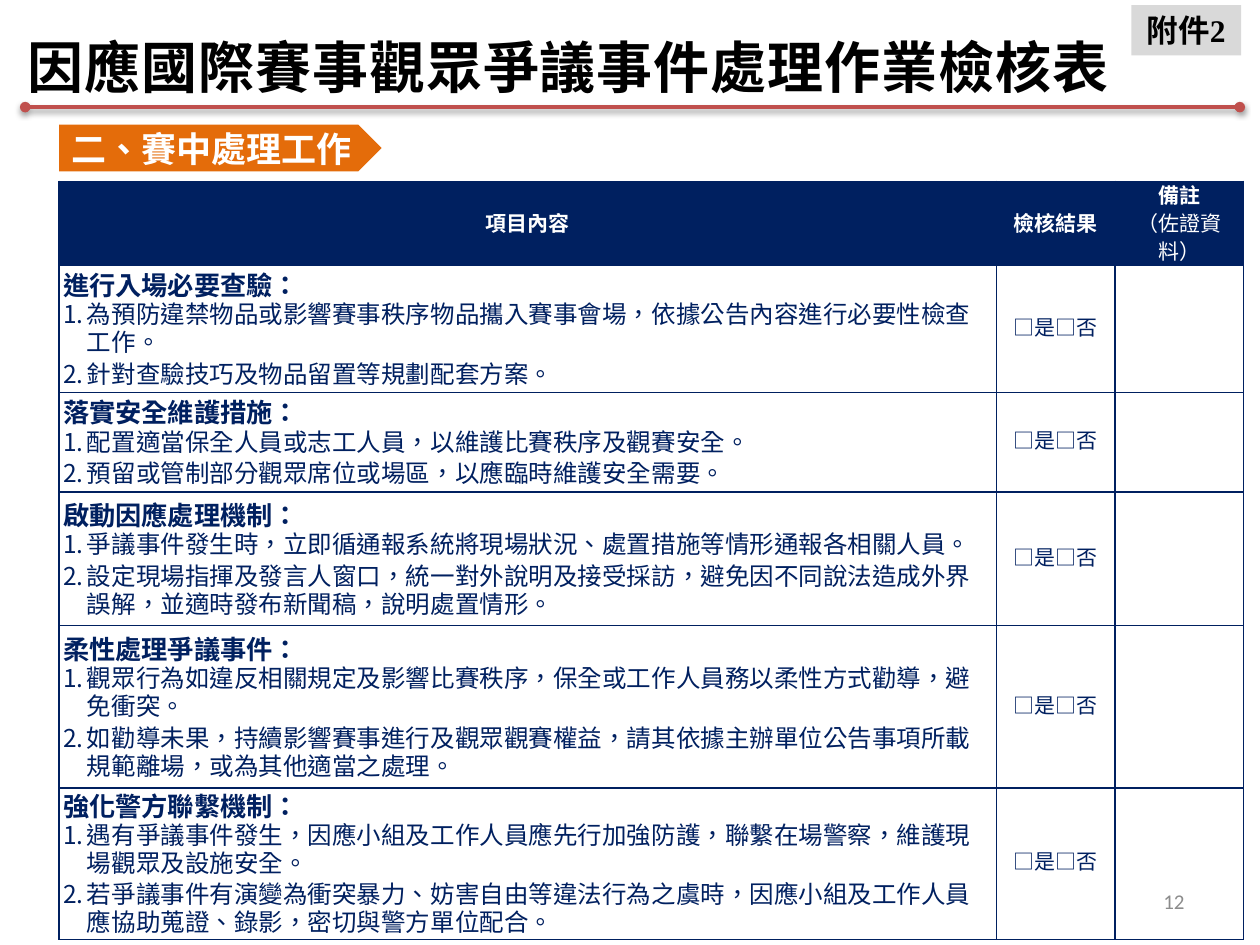
from lxml.etree import SubElement
from pptx import Presentation
from pptx.dml.color import RGBColor
from pptx.enum.lang import MSO_LANGUAGE_ID as Language
from pptx.enum.shapes import MSO_CONNECTOR as Connector, MSO_SHAPE as Shape
from pptx.enum.text import MSO_ANCHOR as Anchor, MSO_AUTO_SIZE as AutoSize, PP_ALIGN as Align
from pptx.oxml import parse_xml
from pptx.oxml.ns import nsdecls, qn
from pptx.util import Inches, Pt

COLORS = {"navy": "002060", "white": "FFFFFF", "orange": "E46C0A", "black": "000000",
          "red": "C0504D", "silver": "D9D9D9", "gray": "8C8C8C"}
SERIF, SANS, LATIN = "Times New Roman", "Noto Sans CJK SC", "Calibri"
COLUMNS = [7.44, 0.94, 1.02]
ROWS = [0.22, 1.01, 0.79, 1.06, 1.29, 1.2]
HEADINGS = [["項目內容"], ["檢核結果"], ["備註", "（佐證資料）"]]
ITEMS = [
    ("進行入場必要查驗：",
     "為預防違禁物品或影響賽事秩序物品攜入賽事會場，依據公告內容進行必要性檢查工作。",
     "針對查驗技巧及物品留置等規劃配套方案。"),
    ("落實安全維護措施：",
     "配置適當保全人員或志工人員，以維護比賽秩序及觀賽安全。",
     "預留或管制部分觀眾席位或場區，以應臨時維護安全需要。"),
    ("啟動因應處理機制：",
     "爭議事件發生時，立即循通報系統將現場狀況、處置措施等情形通報各相關人員。",
     "設定現場指揮及發言人窗口，統一對外說明及接受採訪，避免因不同說法造成外界誤解，並適時發布新聞稿，說明處置情形。"),
    ("柔性處理爭議事件：",
     "觀眾行為如違反相關規定及影響比賽秩序，保全或工作人員務以柔性方式勸導，避免衝突。",
     "如勸導未果，持續影響賽事進行及觀眾觀賽權益，請其依據主辦單位公告事項所載規範離場，或為其他適當之處理。"),
    ("強化警方聯繫機制：",
     "遇有爭議事件發生，因應小組及工作人員應先行加強防護，聯繫在場警察，維護現場觀眾及設施安全。",
     "若爭議事件有演變為衝突暴力、妨害自由等違法行為之虞時，因應小組及工作人員應協助蒐證、錄影，密切與警方單位配合。"),
]


def color(name):
    """Return a named colour."""
    return RGBColor.from_string(COLORS[name])


def add_span(para, text, size, ink, font=SERIF, bold=False):
    """Add one formatted run to a paragraph."""
    span = para.add_run()
    span.text = text
    span.font.size, span.font.bold, span.font.name = Pt(size), bold, font
    span.font.color.rgb = color(ink)
    span.font.language_id = Language.TRADITIONAL_CHINESE
    SubElement(span.font._element, qn("a:ea"), typeface=SANS)
    return span


def next_para(frame, index, spacing, align=Align.LEFT):
    """Return the paragraph at an index, added if needed, with exact line spacing."""
    para = frame.paragraphs[0] if index == 0 else frame.add_paragraph()
    para.alignment, para.line_spacing = align, Pt(spacing)
    return para


def number_para(para):
    """Give a paragraph an automatic number and a hanging indent."""
    props = para._p.get_or_add_pPr()
    props.set("marL", str(Inches(0.19)))
    props.set("indent", str(-Inches(0.19)))
    SubElement(props, qn("a:buFont"), typeface=SANS)
    SubElement(props, qn("a:buAutoNum"), type="arabicPeriod")
    para.space_after = Pt(2)


def style_cell(cell, margin, fill=None):
    """Set the margins, borders and fill of a cell."""
    cell.vertical_anchor = Anchor.MIDDLE
    cell.margin_left = cell.margin_right = Inches(margin)
    cell.margin_top = cell.margin_bottom = 0
    for side in ("lnL", "lnR", "lnT", "lnB"):
        cell._tc.get_or_add_tcPr().append(parse_xml(
            f'<a:{side} {nsdecls("a")} w="{Pt(1)}"><a:solidFill>'
            f'<a:srgbClr val="{COLORS["navy"]}"/></a:solidFill></a:{side}>'))
    if fill:
        cell.fill.solid()
        cell.fill.fore_color.rgb = color(fill)
    else:
        cell.fill.background()


def add_title(page, box):
    """Place the slide title."""
    title = page.shapes.title
    title.left, title.top, title.width, title.height = map(Inches, box)
    frame = title.text_frame
    frame.word_wrap, frame.auto_size = False, AutoSize.SHAPE_TO_FIT_TEXT
    frame.vertical_anchor = Anchor.TOP
    para = frame.paragraphs[0]
    para.alignment = Align.LEFT
    span = add_span(para, "因應國際賽事觀眾爭議事件處理作業檢核表", 32, "black", SANS, True)
    span.font._element.set("spc", "50")


def add_rule(page, left, right, top):
    """Draw the shadowed line with round ends under the title."""
    rule = page.shapes.add_connector(
        Connector.STRAIGHT, Inches(left), Inches(top), Inches(right), Inches(top))
    rule.line.color.rgb, rule.line.width = color("red"), Pt(2)
    for end in ("headEnd", "tailEnd"):
        SubElement(rule.line._get_or_add_ln(), qn(f"a:{end}"), type="oval")
    rule._element.spPr.append(parse_xml(
        f'<a:effectLst {nsdecls("a")}><a:outerShdw blurRad="{Pt(3.1)}" dist="{Pt(1.6)}" '
        f'dir="5400000" rotWithShape="0"><a:srgbClr val="{COLORS["black"]}">'
        '<a:alpha val="38000"/></a:srgbClr></a:outerShdw></a:effectLst>'))


def add_label(page, box, kind, fill, text, size, ink, align, anchor):
    """Draw a filled shape with one bold line of text."""
    label = page.shapes.add_shape(kind, *map(Inches, box))
    label.shadow.inherit = False
    label.fill.solid()
    label.fill.fore_color.rgb = color(fill)
    label.line.fill.background()
    frame = label.text_frame
    frame.word_wrap, frame.vertical_anchor = True, anchor
    frame.paragraphs[0].alignment = align
    add_span(frame.paragraphs[0], text, size, ink, bold=True)


def fill_heading(cell, lines):
    """Write a heading cell, with its first line bold."""
    style_cell(cell, 0.05, "navy")
    for index, text in enumerate(lines):
        para = next_para(cell.text_frame, index, 16, Align.CENTER)
        add_span(para, text, 12, "white", bold=index == 0)


def fill_item(cell, lines):
    """Write a bold item heading and its numbered steps."""
    style_cell(cell, 0.03)
    for index, text in enumerate(lines):
        para = next_para(cell.text_frame, index, 16 if index else 20)
        if index:
            number_para(para)
        add_span(para, text, 14 if index else 15, "navy", bold=index == 0)


def fill_result(cell):
    """Write the yes and no check boxes."""
    style_cell(cell, 0.03)
    para = next_para(cell.text_frame, 0, 14, Align.CENTER)
    for answer in "是否":
        add_span(para, "□", 12, "navy", SANS)
        add_span(para, answer, 12, "navy")


def add_checklist(page, left, top):
    """Build the checklist table."""
    table = page.shapes.add_table(
        len(ROWS), len(COLUMNS), Inches(left), Inches(top),
        Inches(sum(COLUMNS)), Inches(sum(ROWS))).table
    for column, width in zip(table.columns, COLUMNS):
        column.width = Inches(width)
    for row, height in zip(table.rows, ROWS):
        row.height = Inches(height)
    for index, lines in enumerate(HEADINGS):
        fill_heading(table.cell(0, index), lines)
    for index, lines in enumerate(ITEMS, 1):
        fill_item(table.cell(index, 0), lines)
        fill_result(table.cell(index, 1))
        style_cell(table.cell(index, 2), 0.03)


def add_page_number(page, box):
    """Place the page number."""
    frame = page.shapes.add_textbox(*map(Inches, box)).text_frame
    frame.word_wrap, frame.vertical_anchor = True, Anchor.MIDDLE
    frame.paragraphs[0].alignment = Align.RIGHT
    add_span(frame.paragraphs[0], "12", 12, "gray", LATIN)


def main():
    """Build and save the deck."""
    deck = Presentation()
    deck.slide_width, deck.slide_height = Inches(10), Inches(7.5)
    page = deck.slides.add_slide(deck.slide_layouts[5])
    add_checklist(page, 0.47, 1.44)
    add_label(page, (0.47, 0.99, 2.56, 0.37), Shape.PENTAGON, "orange",
              "二、賽中處理工作", 20, "white", Align.LEFT, Anchor.MIDDLE)
    add_title(page, (0.12, 0.21, 8.86, 0.64))
    add_rule(page, 0.2, 9.84, 0.85)
    add_page_number(page, (7.17, 6.95, 2.33, 0.4))
    add_label(page, (8.98, 0.04, 0.87, 0.4), Shape.RECTANGLE, "silver",
              "附件2", 18, "black", Align.CENTER, Anchor.TOP)
    deck.save("out.pptx")


if __name__ == "__main__":
    main()
